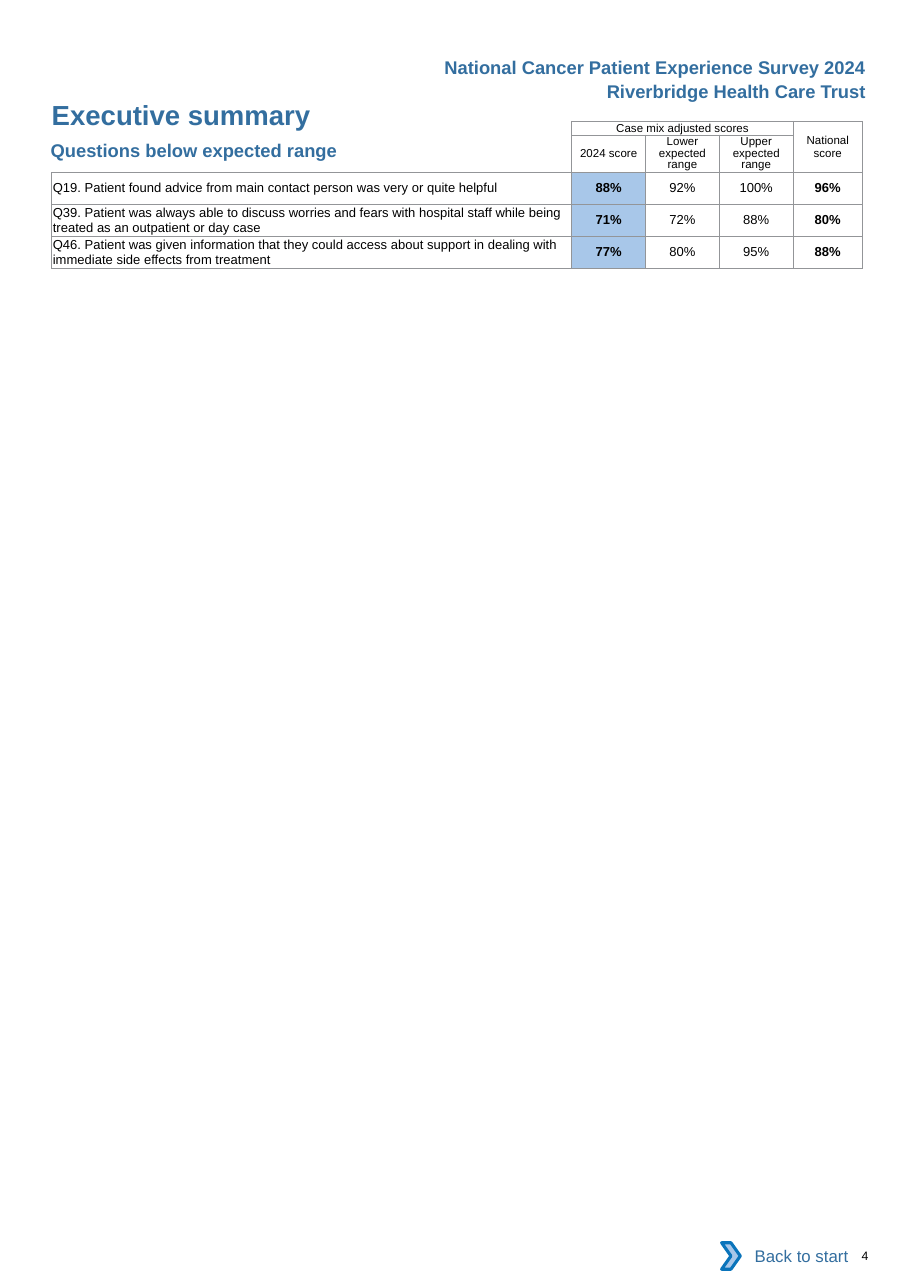
from dataclasses import dataclass

from lxml.etree import SubElement
from pptx import Presentation
from pptx.dml.color import RGBColor
from pptx.enum.shapes import MSO_SHAPE
from pptx.enum.text import MSO_ANCHOR, PP_ALIGN
from pptx.oxml.ns import qn
from pptx.util import Inches, Pt

BLUE, BLACK, WHITE = "336E9F", "000000", "FFFFFF"
TINT, GREY, EDGE = "A8C7E9", "939598", "0A74BB"
LEFT, MID, RIGHT = PP_ALIGN.LEFT, PP_ALIGN.CENTER, PP_ALIGN.RIGHT


@dataclass
class Label:
    text: str
    left: float
    top: float
    width: float
    height: float
    size: float
    bold: bool = True
    color: str = BLUE
    align: PP_ALIGN = LEFT


@dataclass
class Score:
    question: str
    values: tuple[str, ...]


@dataclass
class Head:
    text: str
    row: int
    col: int
    pad: float = 0
    pitch: float | None = None


LABELS = [
    Label("4", 7.82, 11.33, 0.41, 0.13, 8, False, BLACK),
    Label("Executive summary", 0.47, 0.89, 2.64, 0.3, 18),
    Label("Questions below expected range", 0.46, 1.26, 3.01, 0.2, 12),
    Label("National Cancer Patient Experience Survey 2024",
          3.36, 0.51, 4.5, 0.2, 12, align=RIGHT),
    Label("Riverbridge Health Care Trust", 3.36, 0.73, 4.5, 0.2, 12, align=RIGHT),
]

HEADS = [
    Head("Case mix adjusted scores", 0, 1, pitch=9),
    Head("National score", 0, 4),
    Head("2024 score", 1, 1),
    Head("Lower expected range", 1, 2, 0.12, 7.6),
    Head("Upper expected range", 1, 3, 0.12, 7.6),
]

SCORES = [
    Score("Q19. Patient found advice from main contact person was very or quite "
          "helpful", ("88%", "92%", "100%", "96%")),
    Score("Q39. Patient was always able to discuss worries and fears with hospital "
          "staff while being treated as an outpatient or day case",
          ("71%", "72%", "88%", "80%")),
    Score("Q46. Patient was given information that they could access about support "
          "in dealing with immediate side effects from treatment",
          ("77%", "80%", "95%", "88%")),
]

COLS = [4.72, 0.67, 0.67, 0.67, 0.63]
ROWS = [0.12, 0.34] + [0.29] * len(SCORES)


def rgb(code: str) -> RGBColor:
    return RGBColor.from_string(code)


def style(para, size: float, bold: bool, color: str, align: PP_ALIGN) -> None:
    para.alignment = align
    font = para.font
    font.name, font.size, font.bold = "Arial", Pt(size), bold
    font.color.rgb = rgb(color)


def inset(item, side: float = 0) -> None:
    item.margin_left = item.margin_right = Inches(side)
    item.margin_top = item.margin_bottom = 0


def add_label(slide, label: Label) -> None:
    box = slide.shapes.add_textbox(Inches(label.left), Inches(label.top),
                                   Inches(label.width), Inches(label.height))
    frame = box.text_frame
    frame.word_wrap = True
    inset(frame)
    frame.text = label.text
    style(frame.paragraphs[0], label.size, label.bold, label.color, label.align)


def add_block(slide, kind: MSO_SHAPE, left: float, top: float,
              width: float, height: float, fill: str):
    block = slide.shapes.add_shape(kind, Inches(left), Inches(top),
                                   Inches(width), Inches(height))
    block.shadow.inherit = False
    block.fill.solid()
    block.fill.fore_color.rgb = rgb(fill)
    block.line.fill.background()
    return block


def border(cell, sides: str) -> None:
    props = cell._tc.get_or_add_tcPr()
    for side in "LRTB":
        shown = side in sides
        line = SubElement(props, qn(f"a:ln{side}"), w=str(Pt(0.5) if shown else 0))
        if shown:
            fill = SubElement(line, qn("a:solidFill"))
            SubElement(fill, qn("a:srgbClr"), val=GREY)
        else:
            SubElement(line, qn("a:noFill"))


def write(cell, text: str, size: float, bold: bool = False,
          align: PP_ALIGN = MID, pad: float = 0):
    cell.text = text
    inset(cell, pad)
    para = cell.text_frame.paragraphs[0]
    style(para, size, bold, BLACK, align)
    return para


def add_scores(slide) -> None:
    table = slide.shapes.add_table(len(ROWS), len(COLS), Inches(0.47), Inches(1.1),
                                   Inches(sum(COLS)), Inches(sum(ROWS))).table
    table.first_row = table.horz_banding = False
    for col, width in zip(table.columns, COLS):
        col.width = Inches(width)
    for row, height in zip(table.rows, ROWS):
        row.height = Inches(height)

    # Borders, anchors and small type for empty cells
    corner = {(0, 0): "R", (1, 0): "RB"}
    for r in range(len(ROWS)):
        for c in range(len(COLS)):
            cell = table.cell(r, c)
            border(cell, corner.get((r, c), "LRTB"))
            cell.fill.background()
            cell.vertical_anchor = MSO_ANCHOR.MIDDLE
            inset(cell)
            para = cell.text_frame.paragraphs[0]
            SubElement(para._p, qn("a:endParaRPr"), sz="100")

    # Header
    table.cell(0, 0).merge(table.cell(1, 0))
    table.cell(0, 1).merge(table.cell(0, 3))
    table.cell(0, 4).merge(table.cell(1, 4))
    for head in HEADS:
        para = write(table.cell(head.row, head.col), head.text, 7.5, pad=head.pad)
        if head.pitch:
            para.line_spacing = Pt(head.pitch)

    # Questions and scores
    for r, score in enumerate(SCORES, 2):
        write(table.cell(r, 0), score.question, 8.5, align=LEFT, pad=0.01)
        for c, value in enumerate(score.values, 1):
            write(table.cell(r, c), value, 8.5, bold=c in (1, 4))
        own = table.cell(r, 1)
        own.fill.solid()
        own.fill.fore_color.rgb = rgb(TINT)


def add_back(slide) -> None:
    back = add_block(slide, MSO_SHAPE.RECTANGLE, 6.62, 11.19, 1.18, 0.42, WHITE)
    frame = back.text_frame
    frame.word_wrap = True
    frame.vertical_anchor = MSO_ANCHOR.MIDDLE
    frame.text = "Back to start"
    style(frame.paragraphs[0], 11, False, BLUE, RIGHT)
    arrow = add_block(slide, MSO_SHAPE.CHEVRON, 6.55, 11.28, 0.17, 0.24, TINT)
    arrow.line.color.rgb = rgb(EDGE)
    arrow.line.width = Pt(2)


def main() -> None:
    deck = Presentation()
    deck.slide_width, deck.slide_height = Inches(8.26), Inches(11.69)
    slide = deck.slides.add_slide(deck.slide_layouts[6])
    for label in LABELS:
        add_label(slide, label)
    add_scores(slide)
    add_back(slide)
    deck.save("out.pptx")


if __name__ == "__main__":
    main()
